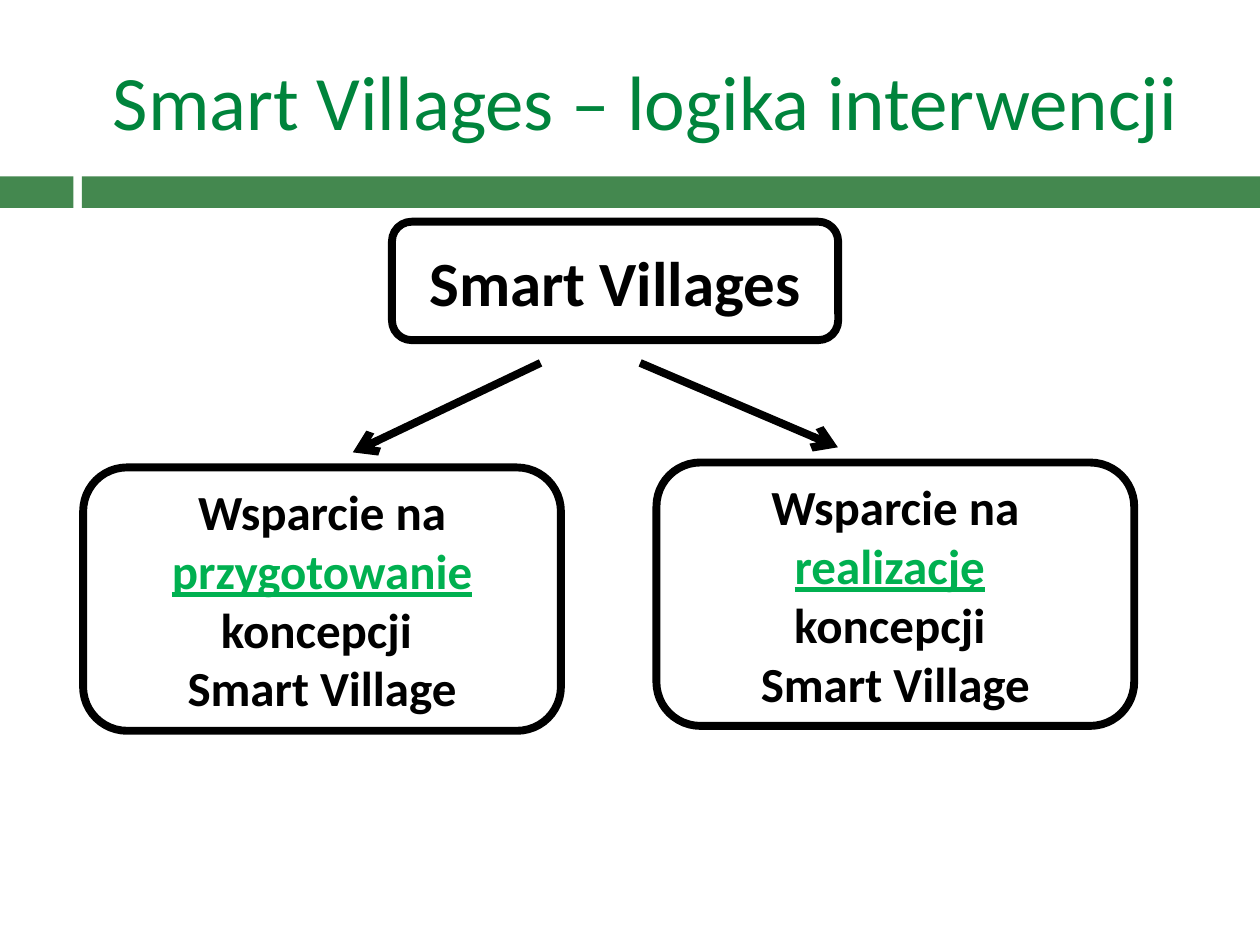
from dataclasses import dataclass

from lxml.etree import SubElement
from pptx import Presentation
from pptx.dml.color import RGBColor
from pptx.enum.shapes import MSO_CONNECTOR as Connector, MSO_SHAPE as Shape
from pptx.enum.text import MSO_ANCHOR as Anchor, MSO_AUTO_SIZE as AutoSize, PP_ALIGN as Align
from pptx.oxml.ns import qn
from pptx.util import Pt

COLORS = {
    "band": "44884F",
    "title": "00843C",
    "accent": "00B050",
    "ink": "000000",
    "paper": "FFFFFF",
}
FONT = "Calibri"
LINE_WIDTH = 4.5


@dataclass
class Node:
    left: float
    top: float
    width: float
    height: float
    size: float
    paragraphs: list  # each paragraph is a list of (text, emphasised) pairs


@dataclass
class Arrow:
    start: tuple
    end: tuple


def rgb(name: str) -> RGBColor:
    return RGBColor.from_string(COLORS[name])


def write(paragraph, text: str, *, size: float, color: str = "ink",
          bold: bool = False, underline: bool = False) -> None:
    """Add centred text; a newline becomes a line break."""
    paragraph.alignment = Align.CENTER
    for index, line in enumerate(text.split("\n")):
        if index:
            paragraph.add_line_break()
        run = paragraph.add_run()
        run.text = line
        font = run.font
        font.name, font.size = FONT, Pt(size)
        font.bold, font.underline = bold, underline
        font.color.rgb = rgb(color)


def draw_band(slide, left: float, width: float) -> None:
    band = slide.shapes.add_shape(Shape.RECTANGLE, Pt(left), Pt(100.8), Pt(width), Pt(18))
    band.shadow.inherit = False
    band.fill.solid()
    band.fill.fore_color.rgb = rgb("band")
    band.line.fill.background()


def draw_node(slide, node: Node) -> None:
    box = slide.shapes.add_shape(Shape.ROUNDED_RECTANGLE, Pt(node.left), Pt(node.top),
                                 Pt(node.width), Pt(node.height))
    box.shadow.inherit = False
    box.fill.solid()
    box.fill.fore_color.rgb = rgb("paper")
    box.line.color.rgb = rgb("ink")
    box.line.width = Pt(LINE_WIDTH)
    frame = box.text_frame
    frame.word_wrap = True
    frame.vertical_anchor = Anchor.MIDDLE
    for index, pieces in enumerate(node.paragraphs):
        paragraph = frame.add_paragraph() if index else frame.paragraphs[0]
        for text, emphasised in pieces:
            write(paragraph, text, size=node.size, bold=True, underline=emphasised,
                  color="accent" if emphasised else "ink")


def draw_arrow(slide, arrow: Arrow) -> None:
    connector = slide.shapes.add_connector(
        Connector.STRAIGHT, *(Pt(value) for value in arrow.start + arrow.end))
    connector.line.color.rgb = rgb("ink")
    connector.line.width = Pt(LINE_WIDTH)
    SubElement(connector.line._get_or_add_ln(), qn("a:tailEnd"), type="arrow")
    SubElement(connector._element.spPr, qn("a:effectLst"))


SUPPORT_SIZE = {"width": 273, "height": 150.5, "size": 28}
NODES = [
    Node(224, 126.7, 255, 67.7, 36, [[("Smart Villages", False)]]),
    Node(47.5, 267.1, **SUPPORT_SIZE, paragraphs=[
        [("Wsparcie na ", False), ("przygotowanie", True),
         (" koncepcji \nSmart Village", False)],
    ]),
    Node(375.1, 264.3, **SUPPORT_SIZE, paragraphs=[
        [("Wsparcie na ", False), ("realizację", True), (" ", False)],
        [("koncepcji \nSmart Village", False)],
    ]),
]
ARROWS = [
    Arrow((308.9, 207.4), (201.6, 258.5)),
    Arrow((365.8, 207.4), (478.8, 255.6)),
]


def main() -> None:
    deck = Presentation()
    deck.slide_width, deck.slide_height = Pt(720), Pt(540)
    slide = deck.slides.add_slide(deck.slide_layouts[5])

    # Green band, split near the left edge
    draw_band(slide, 0, 42)
    draw_band(slide, 46.8, 673.2)

    # Title
    title = slide.shapes.title
    title.left, title.top, title.width, title.height = Pt(48), Pt(18), Pt(642), Pt(78)
    title.text_frame.auto_size = AutoSize.NONE
    title.text_frame.vertical_anchor = Anchor.MIDDLE
    write(title.text_frame.paragraphs[0], "Smart Villages – logika interwencji",
          size=44, color="title")

    # Diagram
    for node in NODES:
        draw_node(slide, node)
    for arrow in ARROWS:
        draw_arrow(slide, arrow)

    deck.save("out.pptx")


if __name__ == "__main__":
    main()
